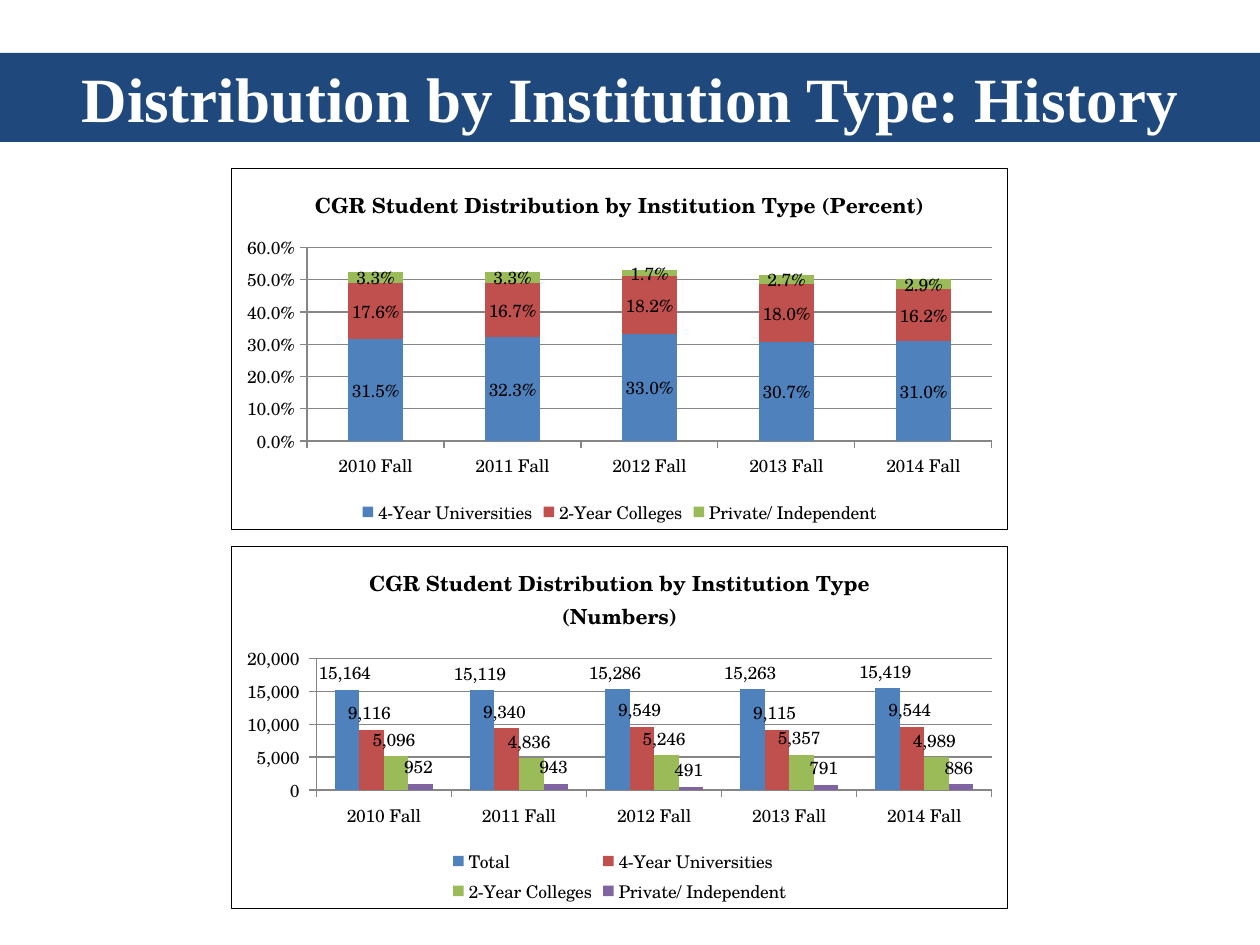
import pptx
import pptx.util
import pptx.chart.data
import pptx.dml.color
import pptx.enum.chart
import pptx.enum.text
import pptx.oxml
from dataclasses import dataclass

SCALE = 914400 / 126
KIND = pptx.enum.chart.XL_CHART_TYPE


@dataclass
class Theme:
    navy: str = "1F497D"
    white: str = "FFFFFF"
    black: str = "000000"
    grid: str = "868686"
    blue: str = "4F81BD"
    red: str = "C0504D"
    green: str = "9BBB59"
    violet: str = "8064A2"
    serif: str = "Times New Roman"
    book: str = "TeX Gyre Schola"
    head: int = 36
    sub: int = 12
    small: int = 10


def px(n):
    return pptx.util.Emu(round(n * SCALE))


def rgb(code):
    return pptx.dml.color.RGBColor.from_string(code)


class Deck:
    def __init__(self, theme):
        self.theme = theme
        self.file = pptx.Presentation()
        self.file.slide_width, self.file.slide_height = px(1260), px(945)
        self.slide = self.file.slides.add_slide(self.file.slide_layouts[5])

    def style(self, font, face, size, color, bold=False):
        font.name, font.size, font.bold = face, pptx.util.Pt(size), bold
        font.color.rgb = rgb(color)

    def title(self, text, x, y, w, h):
        t = self.theme
        bar = self.slide.shapes.title
        bar.left, bar.top, bar.width, bar.height = map(px, (x, y, w, h))
        bar.fill.solid()
        bar.fill.fore_color.rgb = rgb(t.navy)
        frame = bar.text_frame
        frame.word_wrap = True
        frame.auto_size = pptx.enum.text.MSO_AUTO_SIZE.NONE
        frame.vertical_anchor = pptx.enum.text.MSO_ANCHOR.MIDDLE
        par = frame.paragraphs[0]
        par.alignment = pptx.enum.text.PP_ALIGN.CENTER
        run = par.add_run()
        run.text = text
        self.style(run.font, t.serif, t.head, t.white, True)

    def border(self, chart):
        box = pptx.oxml.parse_xml(
            '<c:spPr xmlns:c="http://schemas.openxmlformats.org/drawingml/2006/chart"'
            ' xmlns:a="http://schemas.openxmlformats.org/drawingml/2006/main">'
            f'<a:solidFill><a:srgbClr val="{self.theme.white}"/></a:solidFill>'
            f'<a:ln w="9525"><a:solidFill><a:srgbClr val="{self.theme.black}"/>'
            '</a:solidFill></a:ln></c:spPr>')
        chart.element.chart.addnext(box)

    def axis(self, axis, fmt):
        axis.major_tick_mark = pptx.enum.chart.XL_TICK_MARK.OUTSIDE
        axis.tick_labels.number_format = fmt
        axis.tick_labels.number_format_is_linked = False
        axis.format.line.color.rgb = rgb(self.theme.grid)

    def chart(self, kind, text, cats, rows, fmt, x, y, w, h):
        t = self.theme
        data = pptx.chart.data.CategoryChartData(number_format=fmt)
        data.categories = cats
        for name, color, vals in rows:
            data.add_series(name, vals)
        chart = self.slide.shapes.add_chart(
            kind, *map(px, (x, y, w, h)), data).chart
        self.style(chart.font, t.book, t.small, t.black)
        self.border(chart)

        chart.has_title = True
        run = chart.chart_title.text_frame.paragraphs[0].add_run()
        run.text = text
        self.style(run.font, t.book, t.sub, t.black, True)
        chart.chart_title.include_in_layout = False

        chart.has_legend = True
        chart.legend.position = pptx.enum.chart.XL_LEGEND_POSITION.BOTTOM
        chart.legend.include_in_layout = False

        self.axis(chart.category_axis, "General")
        self.axis(chart.value_axis, fmt)
        chart.value_axis.has_major_gridlines = True
        chart.value_axis.major_gridlines.format.line.color.rgb = rgb(t.grid)

        plot = chart.plots[0]
        plot.gap_width, plot.vary_by_categories = 150, False
        plot.overlap = 100 if kind == KIND.COLUMN_STACKED else 0
        for bars, (name, color, vals) in zip(plot.series, rows):
            bars.format.fill.solid()
            bars.format.fill.fore_color.rgb = rgb(color)
            tags = bars.data_labels
            tags.show_value = True
            tags.number_format, tags.number_format_is_linked = fmt, False
            self.style(tags.font, t.book, t.small, t.black)

    def save(self):
        self.file.save("out.pptx")


def main():
    t = Theme()
    deck = Deck(t)
    deck.title("Distribution by Institution Type: History", 0, 53, 1260, 89)
    falls = [f"{year} Fall" for year in range(2010, 2015)]
    four, two, priv = "4-Year Universities", "2-Year Colleges", "Private/ Independent"
    topic = "CGR Student Distribution by Institution Type"
    shares = [
        (four, t.blue, (0.315, 0.323, 0.33, 0.307, 0.31)),
        (two, t.red, (0.176, 0.167, 0.182, 0.18, 0.162)),
        (priv, t.green, (0.033, 0.033, 0.017, 0.027, 0.029)),
    ]
    counts = [
        ("Total", t.blue, (15164, 15119, 15286, 15263, 15419)),
        (four, t.red, (9116, 9340, 9549, 9115, 9544)),
        (two, t.green, (5096, 4836, 5246, 5357, 4989)),
        (priv, t.violet, (952, 943, 491, 791, 886)),
    ]
    deck.chart(KIND.COLUMN_STACKED, f"{topic} (Percent)", falls, shares,
               "0.0%", 231, 168, 777, 362)
    deck.chart(KIND.COLUMN_CLUSTERED, f"{topic} (Numbers)", falls, counts,
               r"#,##0_);\(#,##0\)", 231, 546, 777, 363)
    deck.save()


if __name__ == "__main__":
    main()
